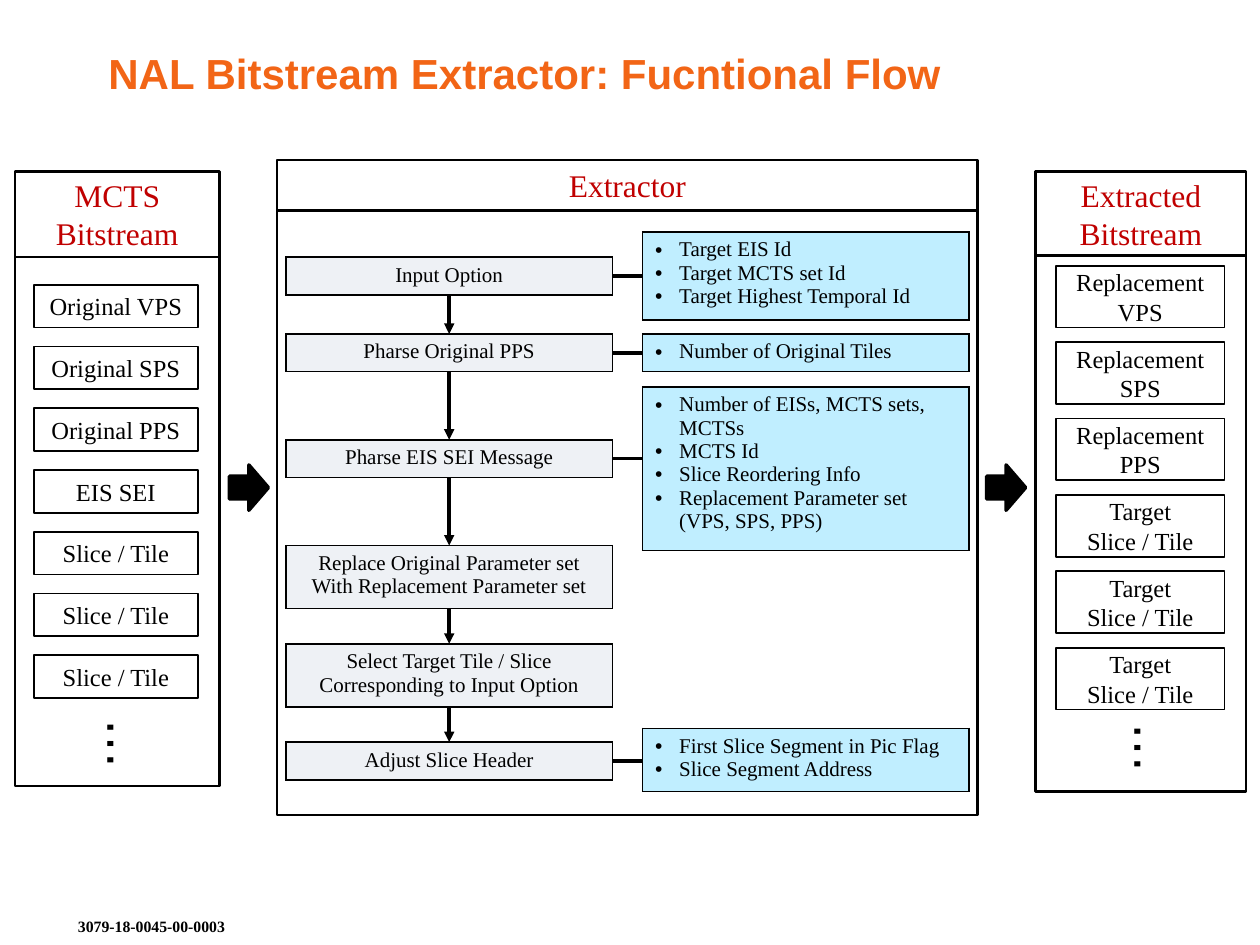
from itertools import pairwise

from lxml import etree
from pptx import Presentation
from pptx.dml.color import RGBColor
from pptx.enum.shapes import MSO_CONNECTOR as Connector, MSO_SHAPE as Shape
from pptx.enum.text import MSO_ANCHOR as Anchor, PP_ALIGN as Align
from pptx.oxml.ns import qn
from pptx.util import Inches, Pt

BLACK = RGBColor(0x00, 0x00, 0x00)
ORANGE = RGBColor(0xF2, 0x65, 0x16)
RED = RGBColor(0xC0, 0x00, 0x00)
PALE_GREY = RGBColor(0xEE, 0xF1, 0xF5)
PALE_BLUE = RGBColor(0xC0, 0xEE, 0xFF)
SERIF = "Times New Roman"

# The slide is a grid of 100 columns by 75 rows
COLUMNS, ROWS = 100, 75
UNIT = Inches(0.1)

STEP_LEFT, DETAIL_LEFT, CELL_WIDTH = 22.7, 51, 25.9

# Each step: top, height, text, and its detail: top, height, text
STEPS = [
    (20.4, 3, "Input Option",
     (18.4, 7, "Target EIS Id\nTarget MCTS set Id\nTarget Highest Temporal Id")),
    (26.5, 3, "Pharse Original PPS", (26.5, 3, "Number of Original Tiles")),
    (34.9, 3, "Pharse EIS SEI Message",
     (30.7, 12.1, "Number of EISs, MCTS sets, MCTSs\nMCTS Id\n"
      "Slice Reordering Info\nReplacement Parameter set (VPS, SPS, PPS)")),
    (43.3, 5, "Replace Original Parameter set\nWith Replacement Parameter set", None),
    (51.1, 5, "Select Target Tile / Slice Corresponding to Input Option", None),
    (58.9, 3, "Adjust Slice Header",
     (57.8, 5, "First Slice Segment in Pic Flag\nSlice Segment Address")),
]
SOURCE_UNITS = ["Original VPS", "Original SPS", "Original PPS", "EIS SEI",
                *["Slice / Tile"] * 3]
EXTRACTED_UNITS = ["Replacement\nVPS", "Replacement\nSPS", "Replacement\nPPS",
                   *["Target\nSlice / Tile"] * 3]


def grid(*counts):
    return [round(count * UNIT) for count in counts]


def write(frame, text, size, color=BLACK, font=SERIF, bold=False, align=Align.LEFT):
    frame.text = text
    for paragraph in frame.paragraphs:
        paragraph.alignment = align
        for run in paragraph.runs:
            run.font.size, run.font.name, run.font.bold = Pt(size), font, bold
            run.font.color.rgb = color


def add_box(slide, area, weight, text="", size=14, color=BLACK):
    box = slide.shapes.add_shape(Shape.RECTANGLE, *grid(*area))
    box.shadow.inherit = False
    box.fill.background()
    box.line.color.rgb = BLACK
    box.line.width = Pt(weight)
    if text:
        box.text_frame.vertical_anchor = Anchor.MIDDLE
        write(box.text_frame, text, size, color, align=Align.CENTER)


def add_label(slide, area, text, size, wrap=True, **style):
    label = slide.shapes.add_textbox(*grid(*area))
    label.text_frame.word_wrap = wrap
    write(label.text_frame, text, size, **style)
    return label


def add_panel(slide, left, top, width, header, body, heading):
    """Header box with an empty body frame under it."""
    add_box(slide, (left, top + header, width, body), 1.5)
    add_box(slide, (left, top, width, header), 1.5, heading, 18, RED)


def add_stack(slide, left, top, width, height, pitch, units):
    for index, unit in enumerate(units):
        add_box(slide, (left, top + index * pitch, width, height), 1, unit)


def add_ellipsis(slide, left, top):
    dots = add_label(slide, (left, top, 5.1, 5.7), "…", 28, wrap=False,
                     font="DejaVu Sans")
    dots.rotation = 90


def add_bullet(paragraph):
    props = paragraph._p.get_or_add_pPr()
    props.set("marL", str(Inches(0.19)))
    props.set("indent", str(-Inches(0.19)))
    etree.SubElement(props, qn("a:buFont"), typeface="Arial")
    etree.SubElement(props, qn("a:buChar"), char="•")


def add_borders(cell):
    props = cell._tc.get_or_add_tcPr()
    for side in ("a:lnL", "a:lnR", "a:lnT", "a:lnB"):
        border = etree.SubElement(props, qn(side), w=str(Pt(1)))
        fill = etree.SubElement(border, qn("a:solidFill"))
        etree.SubElement(fill, qn("a:srgbClr"), val=str(BLACK))


def add_cell_table(slide, left, top, height, text, fill, bulleted=False):
    area = grid(left, top, CELL_WIDTH, height)
    table = slide.shapes.add_table(1, 1, *area).table
    table.first_row = table.horz_banding = False
    cell = table.cell(0, 0)
    add_borders(cell)
    cell.fill.solid()
    cell.fill.fore_color.rgb = fill
    write(cell.text_frame, text, 12, align=Align.LEFT if bulleted else Align.CENTER)
    if bulleted:
        for paragraph in cell.text_frame.paragraphs:
            add_bullet(paragraph)


def add_line(slide, start, end, arrow=False):
    line = slide.shapes.add_connector(Connector.STRAIGHT, *grid(*start, *end))
    line.line.color.rgb = BLACK
    line.line.width = Pt(2)
    if arrow:
        etree.SubElement(line.line._get_or_add_ln(), qn("a:tailEnd"), type="triangle")
    etree.SubElement(line._element.spPr, qn("a:effectLst"))


def add_block_arrow(slide, left):
    arrow = slide.shapes.add_shape(Shape.RIGHT_ARROW, *grid(left, 36.9, 3.1, 3.6))
    arrow.shadow.inherit = False
    arrow.fill.solid()
    arrow.fill.fore_color.rgb = BLACK
    arrow.line.color.rgb = BLACK
    arrow.line.width = Pt(2)


def add_flow(slide):
    for top, height, text, detail in STEPS:
        add_cell_table(slide, STEP_LEFT, top, height, text, PALE_GREY)
        if detail:
            detail_top, detail_height, items = detail
            add_cell_table(slide, DETAIL_LEFT, detail_top, detail_height, items,
                           PALE_BLUE, bulleted=True)
            middle = top + height / 2
            add_line(slide, (STEP_LEFT + CELL_WIDTH, middle), (DETAIL_LEFT, middle))
    center = STEP_LEFT + CELL_WIDTH / 2
    for (top, height, *_), (next_top, *_) in pairwise(STEPS):
        add_line(slide, (center, top + height), (center, next_top), arrow=True)


def main():
    deck = Presentation()
    deck.slide_width, deck.slide_height = grid(COLUMNS, ROWS)
    slide = deck.slides.add_slide(deck.slide_layouts[6])

    # Title
    title = add_label(slide, (6.7, 3.3, 88.3, 5),
                      "NAL Bitstream Extractor: Fucntional Flow", 24,
                      color=ORANGE, font="Arial", bold=True)
    title.text_frame.margin_left = Inches(0.19)
    title.text_frame.vertical_anchor = Anchor.MIDDLE

    # Input bitstream
    add_panel(slide, 1.2, 13.6, 16.2, 6.8, 42, "MCTS\nBitstream")
    add_stack(slide, 2.7, 22.6, 13, 3.4, 4.9, SOURCE_UNITS)
    add_ellipsis(slide, 7.5, 55.8)

    # Extractor
    add_panel(slide, 22, 12.7, 55.6, 4, 48, "Extractor")
    add_flow(slide)

    # Output bitstream
    add_panel(slide, 82.2, 13.6, 16.7, 6.7, 42.5, "Extracted\nBitstream")
    add_stack(slide, 83.8, 21.1, 13.4, 4.9, 6.06, EXTRACTED_UNITS)
    add_ellipsis(slide, 89, 56.1)

    # Arrows between the panels
    for left in (18.2, 78.3):
        add_block_arrow(slide, left)

    # Document number
    add_label(slide, (5.2, 72.3, 44.2, 2.7), "3079-18-0045-00-0003", 9, bold=True)

    deck.save("out.pptx")


if __name__ == "__main__":
    main()
